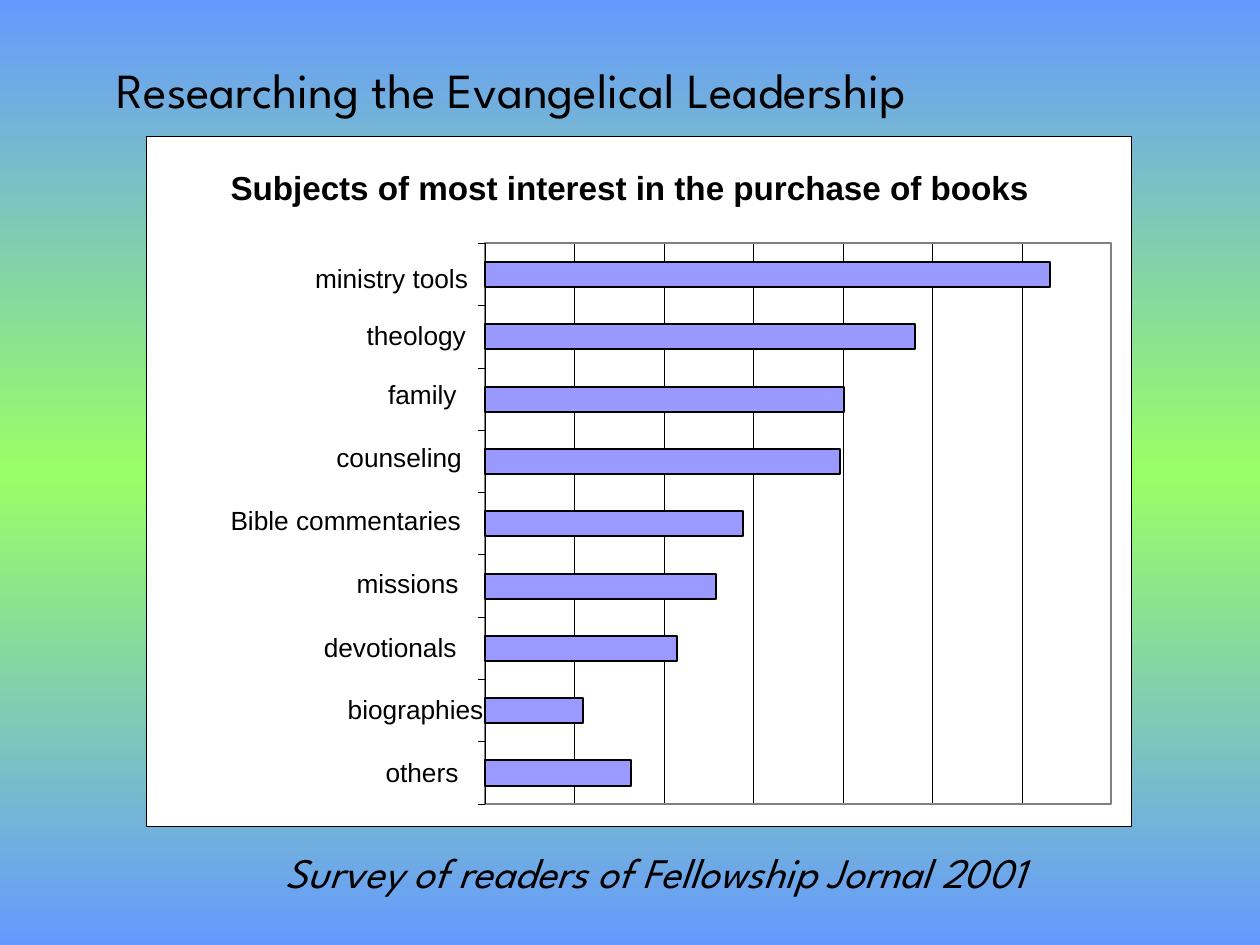
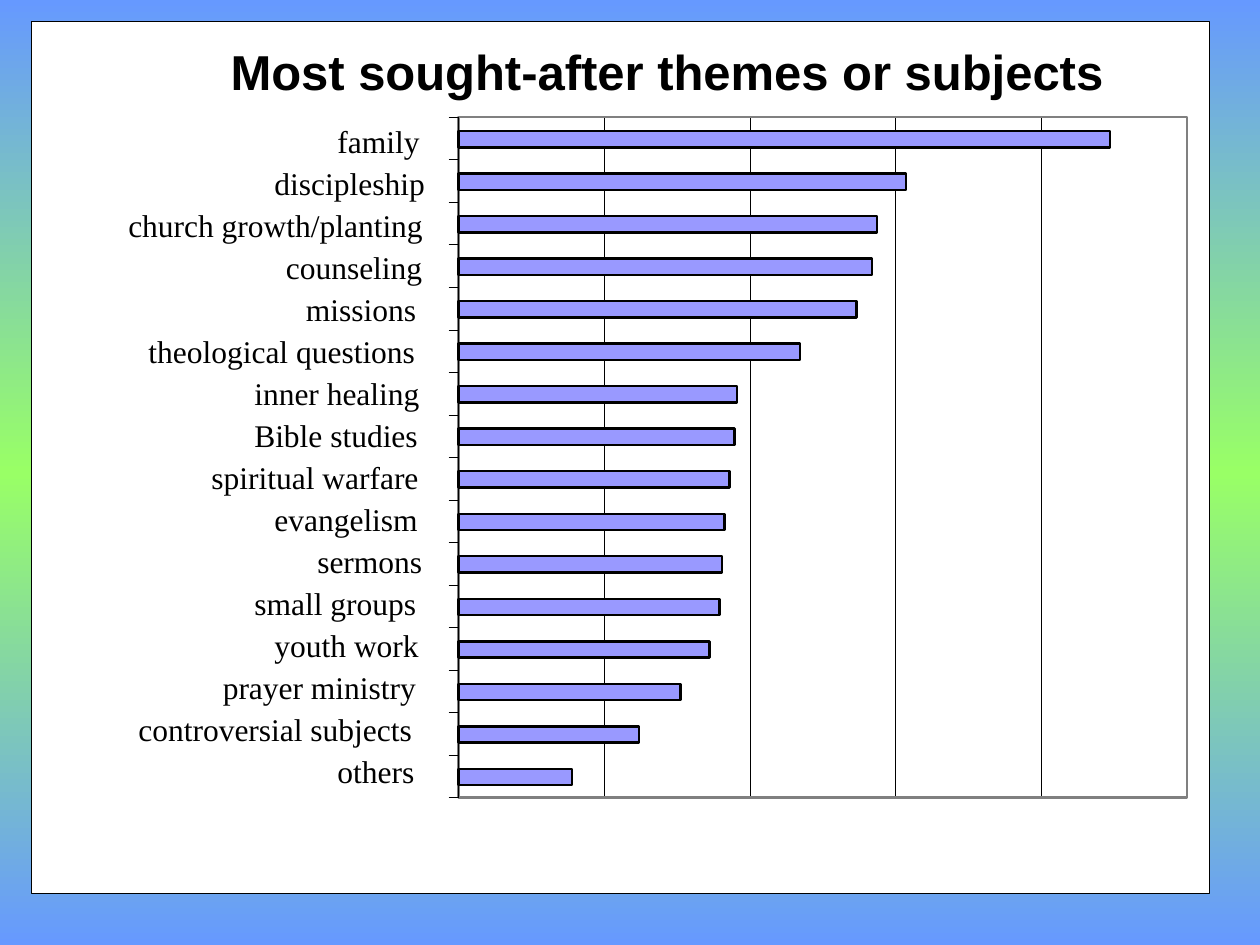
from copy import deepcopy
from dataclasses import dataclass

from lxml.etree import SubElement
from pptx import Presentation
from pptx.dml.color import RGBColor
from pptx.enum.shapes import MSO_CONNECTOR, MSO_SHAPE
from pptx.enum.text import MSO_AUTO_SIZE
from pptx.oxml.ns import qn
from pptx.util import Inches, Pt


@dataclass(frozen=True)
class Theme:
    ink: RGBColor = RGBColor.from_string("000000")
    paper: RGBColor = RGBColor.from_string("FFFFFF")
    bar: RGBColor = RGBColor.from_string("9999FF")
    plot_edge: RGBColor = RGBColor.from_string("808080")
    sky: RGBColor = RGBColor.from_string("6699FF")
    meadow: RGBColor = RGBColor.from_string("99FF66")
    heading_font: str = "League Spartan"
    chart_font: str = "Arial"
    theme_font: str = "Times New Roman"
    heading_size: int = 28
    source_size: int = 24
    subject_title_size: int = 19
    subject_size: int = 15
    theme_size: int = 18
    hairline: float = 0.25


@dataclass(frozen=True)
class Box:
    left: float
    top: float
    width: float
    height: float

    def inches(self):
        return [Inches(v) for v in (self.left, self.top, self.width, self.height)]


@dataclass(frozen=True)
class BarStyle:
    divisions: int
    bar_offset: float
    bar_height: float
    tick: float
    edge: float
    font: str
    size: int
    label_height: float
    padded: bool


@dataclass(frozen=True)
class Row:
    label: str
    label_reach: float
    label_width: float
    bar_length: float


THEME = Theme()

SUBJECT_STYLE = BarStyle(7, 0.15, 0.2, 0.06, 1.13, THEME.chart_font,
                         THEME.subject_size, 0.25, False)
THEMES_STYLE = BarStyle(5, 0.11, 0.13, 0.08, 1.38, THEME.theme_font,
                        THEME.theme_size, 0.4, True)

SUBJECTS = [
    Row("ministry tools", 1.35, 1.22, 4.48),
    Row("theology", 0.94, 0.79, 3.41),
    Row("family", 0.77, 0.55, 2.85),
    Row("counseling", 1.18, 1, 2.82),
    Row("Bible commentaries", 2.02, 1.83, 2.05),
    Row("missions", 1.02, 0.84, 1.83),
    Row("devotionals", 1.28, 1.06, 1.52),
    Row("biographies", 1.09, 1.08, 0.78),
    Row("others", 0.79, 0.58, 1.16),
]
SUBJECT_LABEL_TOPS = [0.15, 0.6, 1.07, 1.57, 2.07, 2.57, 3.08, 3.57, 4.07]

SOUGHT_THEMES = [
    Row("family", 1.06, 0.85, 5.17),
    Row("discipleship", 1.56, 1.4, 3.55),
    Row("church growth/planting", 2.72, 2.54, 3.32),
    Row("counseling", 1.47, 1.28, 3.28),
    Row("missions", 1.31, 1.08, 3.16),
    Row("theological questions", 2.56, 2.32, 2.71),
    Row("inner healing", 1.72, 1.51, 2.21),
    Row("Bible studies", 1.72, 1.5, 2.19),
    Row("spiritual warfare", 2.06, 1.85, 2.15),
    Row("evangelism", 1.56, 1.34, 2.11),
    Row("sermons", 1.22, 1.03, 2.09),
    Row("small groups", 1.72, 1.49, 2.07),
    Row("youth work", 1.56, 1.35, 1.99),
    Row("prayer ministry", 1.97, 1.74, 1.76),
    Row("controversial subjects", 2.64, 2.38, 1.43),
    Row("others", 1.06, 0.81, 0.9),
]
THEME_LABEL_TOPS = [i / 3 - 0.01 for i in range(len(SOUGHT_THEMES))]


def paint_background(master):
    fill = master.background.fill
    fill.gradient()
    fill.gradient_angle = 270
    stop_list = master.element.find(".//" + qn("a:gsLst"))
    stop_list.append(deepcopy(stop_list[0]))
    colors = (THEME.sky, THEME.meadow, THEME.sky)
    for stop, position, color in zip(fill.gradient_stops, (0, 0.5, 1), colors):
        stop.position = position
        stop.color.rgb = color


def add_rect(slide, box, fill, edge, edge_width):
    rect = slide.shapes.add_shape(MSO_SHAPE.RECTANGLE, *box.inches())
    rect.shadow.inherit = False
    if fill is None:
        rect.fill.background()
    else:
        rect.fill.solid()
        rect.fill.fore_color.rgb = fill
    rect.line.color.rgb = edge
    rect.line.width = Pt(edge_width)


def add_line(slide, x1, y1, x2, y2):
    line = slide.shapes.add_connector(
        MSO_CONNECTOR.STRAIGHT, *(Inches(v) for v in (x1, y1, x2, y2)))
    line.line.color.rgb = THEME.ink
    line.line.width = Pt(THEME.hairline)
    SubElement(line.element.spPr, qn("a:effectLst"))


def add_text(slide, box, text, font, size, bold=False, italic=False, padded=True):
    frame = slide.shapes.add_textbox(*box.inches()).text_frame
    frame.word_wrap = False
    frame.auto_size = MSO_AUTO_SIZE.SHAPE_TO_FIT_TEXT
    if not padded:
        frame.margin_left = frame.margin_right = 0
        frame.margin_top = frame.margin_bottom = 0
    frame.text = text
    style = frame.paragraphs[0].runs[0].font
    style.name, style.size = font, Pt(size)
    style.bold, style.italic = bold, italic
    style.color.rgb = THEME.ink


def add_panel(slide, box):
    add_rect(slide, box, THEME.paper, THEME.ink, THEME.hairline)


def add_bars(slide, plot, rows, label_tops, style):
    bottom = plot.top + plot.height
    pitch = plot.height / len(rows)
    for division in range(1, style.divisions + 1):
        x = plot.left + division * plot.width / style.divisions
        add_line(slide, x, plot.top, x, bottom)
    add_rect(slide, plot, None, THEME.plot_edge, style.edge)

    for i, row in enumerate(rows):
        bar = Box(plot.left, plot.top + i * pitch + style.bar_offset,
                  row.bar_length, style.bar_height)
        add_rect(slide, bar, THEME.bar, THEME.ink, style.edge)

    add_line(slide, plot.left, plot.top, plot.left, bottom)
    for i in range(len(rows) + 1):
        y = plot.top + i * pitch
        add_line(slide, plot.left - style.tick, y, plot.left, y)

    for row, drop in zip(rows, label_tops):
        box = Box(plot.left - row.label_reach, plot.top + drop,
                  row.label_width, style.label_height)
        add_text(slide, box, row.label, style.font, style.size, padded=style.padded)


def build_subjects(slide, panel):
    x, y = panel.left, panel.top
    add_panel(slide, panel)
    add_bars(slide, Box(x + 2.69, y + 0.85, 4.97, 4.45),
             SUBJECTS, SUBJECT_LABEL_TOPS, SUBJECT_STYLE)
    add_text(slide, Box(x + 0.67, y + 0.25, 6.36, 0.32),
             "Subjects of most interest in the purchase of books",
             THEME.chart_font, THEME.subject_title_size, bold=True, padded=False)
    add_text(slide, Box(x - 0.33, y - 0.66, 7.82, 0.57),
             "Researching the Evangelical Leadership",
             THEME.heading_font, THEME.heading_size)
    add_text(slide, Box(x + 1.01, y + 5.59, 7.38, 0.5),
             "Survey of readers of Fellowship Jornal 2001",
             THEME.heading_font, THEME.source_size, italic=True)


def build_sought_themes(slide, panel):
    x, y = panel.left, panel.top
    add_panel(slide, panel)
    add_bars(slide, Box(x + 3.39, y + 0.76, 5.78, 5.4),
             SOUGHT_THEMES, THEME_LABEL_TOPS, THEMES_STYLE)
    add_text(slide, Box(x + 1.58, y + 0.16, 6.95, 0.47),
             "Most sought-after themes or subjects",
             THEME.chart_font, THEME.heading_size, bold=True, padded=False)


def main():
    deck = Presentation()
    deck.slide_width, deck.slide_height = Inches(10), Inches(7.5)
    paint_background(deck.slide_master)
    blank = deck.slide_layouts[6]
    build_subjects(deck.slides.add_slide(blank), Box(1.16, 1.08, 7.82, 5.48))
    build_sought_themes(deck.slides.add_slide(blank), Box(0.25, 0.17, 9.35, 6.92))
    deck.save("out.pptx")


if __name__ == "__main__":
    main()
